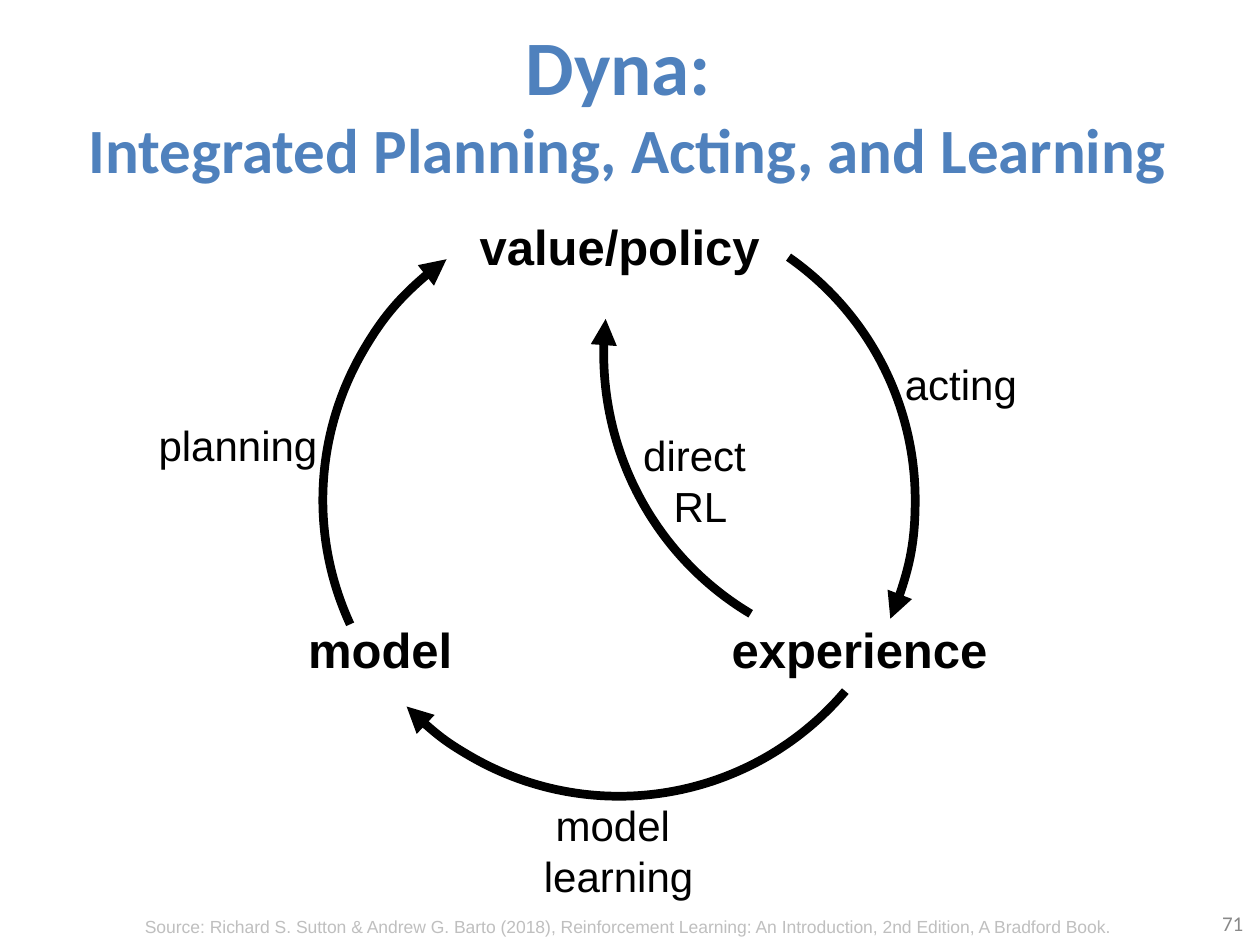
from pptx import Presentation
from pptx.util import Pt
from pptx.dml.color import RGBColor
from pptx.enum.shapes import MSO_SHAPE
from pptx.enum.text import PP_ALIGN, MSO_ANCHOR
from lxml.etree import SubElement
from pptx.oxml.ns import qn

BLACK = RGBColor(0, 0, 0)
BLUE = RGBColor(0x4F, 0x81, 0xBD)
GRAY = RGBColor(0x89, 0x89, 0x89)
PALE = RGBColor(0xBF, 0xBF, 0xBF)
LEFT, MID, RIGHT = PP_ALIGN.LEFT, PP_ALIGN.CENTER, PP_ALIGN.RIGHT

deck = Presentation()
deck.slide_width, deck.slide_height = Pt(720), Pt(540)
slide = deck.slides.add_slide(deck.slide_layouts[6])


def add_text(text, area, size, color=BLACK, bold=False, align=LEFT, face="Arial", wrap=False):
    box = slide.shapes.add_textbox(*map(Pt, area))
    frame = box.text_frame
    frame.word_wrap = wrap
    frame.text = text
    para = frame.paragraphs[0]
    para.alignment = align
    for run in para.runs:
        font = run.font
        font.name, font.size, font.bold = face, Pt(size), bold
        font.color.rgb = color
    return frame


title = add_text("Dyna: \vIntegrated Planning, Acting, and Learning", (34.5, 9.5, 648, 98),
                 36, BLUE, True, MID, "Calibri", True)
title.vertical_anchor = MSO_ANCHOR.MIDDLE
title.paragraphs[0].runs[0].font.size = Pt(44)

page = add_text("71", (549.5, 513.5, 168, 28.5), 12, GRAY, False, RIGHT, "Calibri", True)
page.vertical_anchor = MSO_ANCHOR.MIDDLE

add_text("Source: Richard S. Sutton & Andrew G. Barto (2018), Reinforcement Learning: "
         "An Introduction, 2nd Edition, A Bradford Book.",
         (34.5, 520, 648, 19.5), 10, PALE, False, MID, wrap=True)

ring = (184.5, 116.5, 338.5, 338.5)
inner = (345, 29.5, 340.5, 345)
arcs = [
    (ring, 304.92, 23.63),
    (ring, 40.18, 135.81),
    (ring, 155.19, 234.37),
    (inner, 120.11, 186.66),
]
for area, start, end in arcs:
    arc = slide.shapes.add_shape(MSO_SHAPE.ARC, *map(Pt, area))
    arc.shadow.inherit = False
    arc.adjustments[0] = start * 0.6
    arc.adjustments[1] = end * 0.6
    arc.fill.background()
    arc.line.color.rgb = BLACK
    arc.line.width = Pt(5)
    SubElement(arc.line._get_or_add_ln(), qn("a:tailEnd"), type="triangle")

nodes = [
    ("value/policy", 267, 120, 176.5),
    ("experience", 411, 350.5, 163),
    ("model", 169, 350.5, 98),
]
for text, x, y, width in nodes:
    add_text(text, (x, y, width, 41), 28, bold=True)

labels = [
    ("planning", 83.5, 236, 106.5, 36, LEFT),
    ("model \vlearning", 303, 453.5, 101, 65.5, MID),
    ("acting", 510, 201.5, 79, 36, LEFT),
    ("direct \vRL", 360, 242, 80.5, 65.5, MID),
]
for text, x, y, width, height, align in labels:
    add_text(text, (x, y, width, height), 24, align=align)

deck.save("out.pptx")
